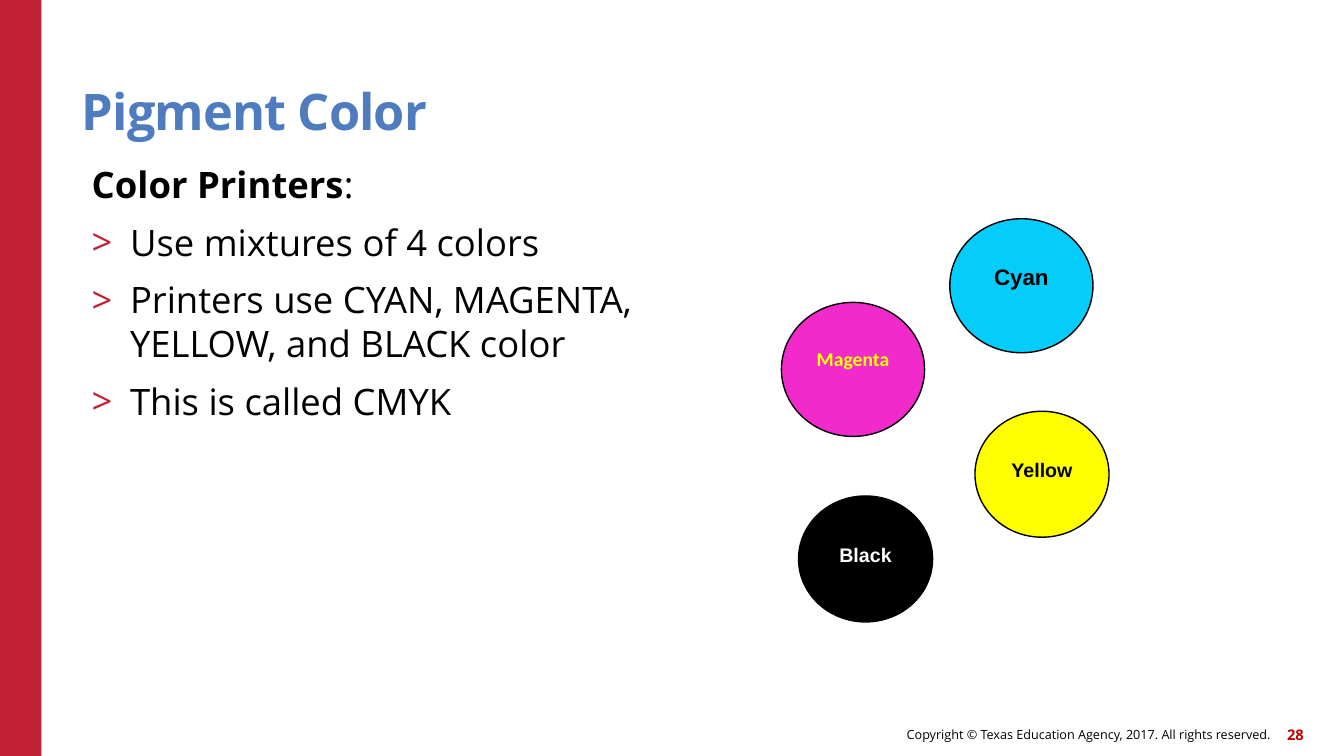
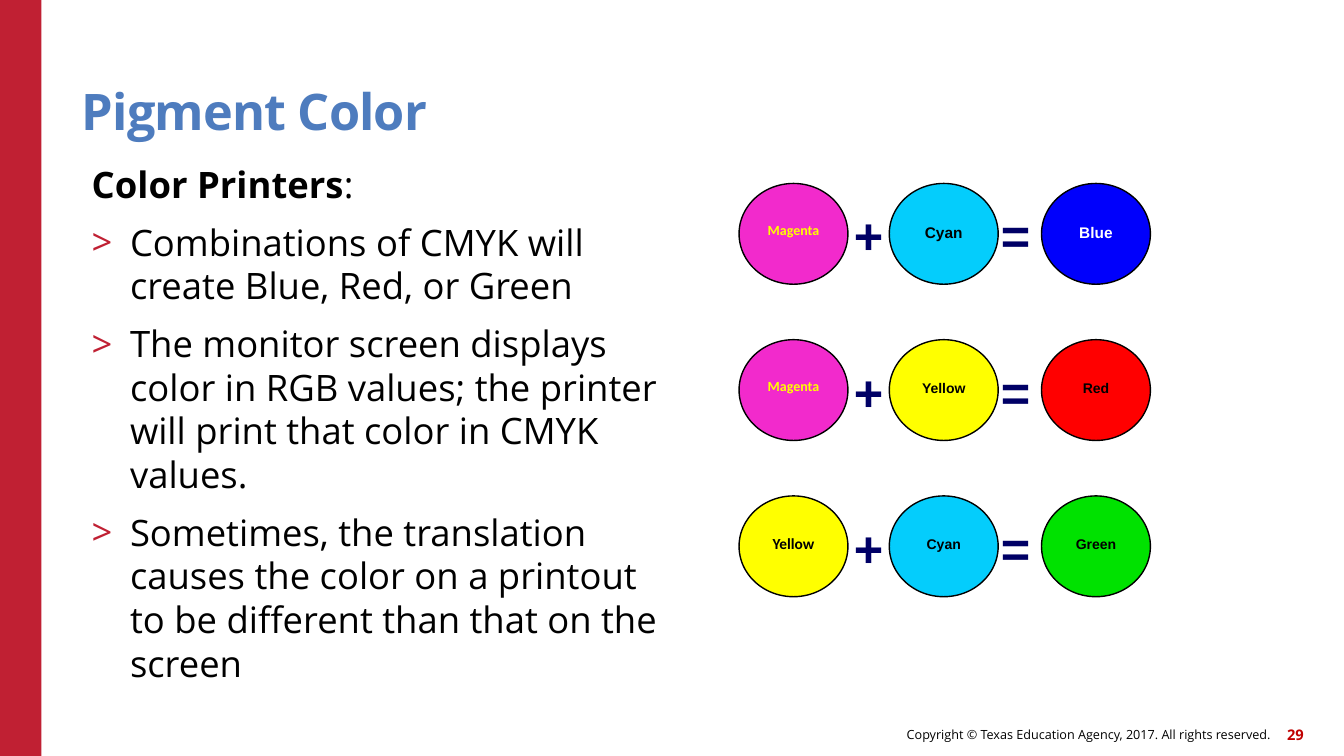
from collections import namedtuple

from lxml.etree import SubElement
from pptx import Presentation
from pptx.dml.color import RGBColor
from pptx.enum.shapes import MSO_SHAPE as SHAPE
from pptx.enum.text import MSO_ANCHOR as ANCHOR, MSO_AUTO_SIZE as AUTO, PP_ALIGN as ALIGN
from pptx.oxml.ns import qn
from pptx.util import Inches, Pt

BAND_RED = RGBColor(0xC0, 0x20, 0x33)
NUMBER_RED = RGBColor(0xC0, 0x00, 0x00)
TITLE_BLUE = RGBColor(0x4E, 0x7C, 0xBE)
SIGN_NAVY = RGBColor(0x00, 0x00, 0x66)
BLACK = RGBColor(0x00, 0x00, 0x00)
WHITE = RGBColor(0xFF, 0xFF, 0xFF)
CYAN = RGBColor(0x04, 0xCD, 0xFC)
MAGENTA = RGBColor(0xF2, 0x2A, 0xCC)
YELLOW = RGBColor(0xFF, 0xFF, 0x00)
BLUE = RGBColor(0x00, 0x00, 0xFC)
RED = RGBColor(0xFF, 0x00, 0x00)
GREEN = RGBColor(0x00, 0xE2, 0x00)

MAIN_FONT = "Open Sans"
TITLE = dict(name=MAIN_FONT, size=Pt(36), bold=True, color=TITLE_BLUE)
BODY = dict(name=MAIN_FONT, size=Pt(26), bold=False, color=BLACK)
LEAD = dict(BODY, bold=True)
COPYRIGHT = dict(name=MAIN_FONT, size=Pt(9), bold=False, color=BLACK)
NUMBER = dict(name=MAIN_FONT, size=Pt(10.5), bold=True, color=NUMBER_RED)
SIGN = dict(name="Arial", size=Pt(36), bold=True, color=SIGN_NAVY)

# drop: distance from the top of the circle's text area to its label, in inches
Ink = namedtuple("Ink", "label fill color size font drop", defaults=("Arial", 0.25))


def style(font, formats):
    for key, value in formats.items():
        if key == "color":
            font.color.rgb = value
        else:
            setattr(font, key, value)


def add_span(para, text, formats):
    span = para.add_run()
    span.text = text
    style(span.font, formats)
    return span


def place(shape, box):
    for key, value in zip(("left", "top", "width", "height"), box):
        setattr(shape, key, Inches(value))


def set_margins(frame, left=0, top=0, right=0, bottom=0):
    for side, value in zip(("left", "top", "right", "bottom"), (left, top, right, bottom)):
        setattr(frame, f"margin_{side}", Inches(value))


def add_shape(shapes, kind, box, fill):
    shape = shapes.add_shape(kind, *map(Inches, box))
    shape.shadow.inherit = False
    shape.fill.solid()
    shape.fill.fore_color.rgb = fill
    return shape


def add_text(shapes, box, text, formats):
    frame = shapes.add_textbox(*map(Inches, box)).text_frame
    frame.word_wrap = True
    add_span(frame.paragraphs[0], text, formats)
    return frame


def add_frame(page, number):
    """Red side band, copyright line and page number."""
    band = add_shape(page.shapes, SHAPE.RECTANGLE, (0, 0, 0.41, 7.5), BAND_RED)
    band.line.fill.background()
    footers = (
        ((6.14, 7.13, 6.46, 0.32),
         "Copyright © Texas Education Agency, 2017. All rights reserved.", COPYRIGHT),
        ((12.51, 7.13, 0.42, 0.32), str(number), NUMBER),
    )
    for box, text, formats in footers:
        frame = add_text(page.shapes, box, text, formats)
        set_margins(frame)
        frame.vertical_anchor = ANCHOR.MIDDLE
        frame.paragraphs[0].alignment = ALIGN.RIGHT


def fill_title(title, box, text):
    place(title, box)
    frame = title.text_frame
    frame.auto_size = AUTO.NONE
    frame.vertical_anchor = ANCHOR.BOTTOM
    set_margins(frame)
    para = frame.paragraphs[0]
    para.alignment = ALIGN.LEFT
    para.line_spacing = 0.9
    span = add_span(para, text, TITLE)
    span.font._element.set("spc", "-60")


def set_bullet(para, mark=None, indent=0.0):
    props = para._p.get_or_add_pPr()
    props.set("marL", str(Inches(indent)))
    props.set("indent", str(-Inches(indent)))
    if mark is None:
        SubElement(props, qn("a:buNone"))
        return
    color = SubElement(props, qn("a:buClr"))
    SubElement(color, qn("a:srgbClr"), val=str(BAND_RED))
    SubElement(props, qn("a:buFont"), typeface=MAIN_FONT)
    SubElement(props, qn("a:buChar"), char=mark)


def fill_body(body, box, lead, points):
    place(body, box)
    frame = body.text_frame
    frame.auto_size = AUTO.NONE
    frame.vertical_anchor = ANCHOR.TOP
    set_margins(frame, 0.1, 0.06, 0.1, 0.05)
    para = frame.paragraphs[0]
    set_bullet(para)
    para.space_before = Pt(0)
    add_span(para, lead, LEAD)
    add_span(para, ":", BODY)
    for point in points:
        para = frame.add_paragraph()
        para.level = 1
        set_bullet(para, ">", 0.38)
        para.space_before = Pt(10)
        add_span(para, point, BODY)


def add_circle(shapes, box, ink):
    circle = add_shape(shapes, SHAPE.OVAL, box, ink.fill)
    circle.line.color.rgb = BLACK
    circle.line.width = Pt(1)
    frame = circle.text_frame
    frame.word_wrap = True
    frame.vertical_anchor = ANCHOR.TOP
    set_margins(frame, top=ink.drop)
    para = frame.paragraphs[0]
    para.alignment = ALIGN.CENTER
    add_span(para, ink.label,
             dict(name=ink.font, size=Pt(ink.size), bold=True, color=ink.color))


def add_equation(page, left, top, inks):
    """One group: ink + ink = result."""
    shapes = page.shapes.add_group_shape().shapes
    for offset, ink in zip((0, 1.49, 3), inks):
        add_circle(shapes, (left + offset, top, 1.08, 1), ink)
    for offset, sign in ((1.04, "+"), (2.5, "=")):
        add_text(shapes, (left + offset, top + 0.16, 0.67, 0.71), sign, SIGN)


def add_page(deck, number, points):
    page = deck.slides.add_slide(deck.slide_layouts[1])
    add_frame(page, number)
    fill_title(page.shapes.title, (0.81, 0.44, 11, 0.96), "Pigment Color")
    fill_body(page.placeholders[1], (0.81, 1.55, 5.86, 5.18), "Color Printers", points)
    return page


def build_inks_page(deck):
    page = add_page(deck, 28, (
        "Use mixtures of 4 colors",
        "Printers use CYAN, MAGENTA, YELLOW, and BLACK color",
        "This is called CMYK",
    ))
    large, small = (1.42, 1.33), (1.33, 1.25)
    for corner, size, ink in (
        ((9.42, 2.17), large, Ink("Cyan", CYAN, BLACK, 16)),
        ((7.75, 3), large, Ink("Magenta", MAGENTA, YELLOW, 14, "Calibri", 0.25)),
        ((9.67, 4.08), small, Ink("Yellow", YELLOW, BLACK, 14, drop=0.28)),
        ((7.92, 4.92), small, Ink("Black", BLACK, WHITE, 14, drop=0.28)),
    ):
        add_circle(page.shapes, corner + size, ink)


def build_mixtures_page(deck):
    page = add_page(deck, 29, (
        "Combinations of CMYK will create Blue, Red, or Green",
        "The monitor screen displays color in RGB values; "
        "the printer will print that color in CMYK values.",
        "Sometimes, the translation causes the color on a printout "
        "to be different than that on the screen",
    ))
    magenta = Ink("Magenta", MAGENTA, YELLOW, 10, "Calibri", 0.23)
    equations = (
        (magenta, Ink("Cyan", CYAN, BLACK, 11), Ink("Blue", BLUE, WHITE, 11)),
        (magenta, Ink("Yellow", YELLOW, BLACK, 10), Ink("Red", RED, BLACK, 10)),
        (Ink("Yellow", YELLOW, BLACK, 11, "Calibri", 0.23),
         Ink("Cyan", CYAN, BLACK, 10), Ink("Green", GREEN, BLACK, 10)),
    )
    for row, inks in enumerate(equations):
        add_equation(page, 7.33, 1.82 + 1.55 * row, inks)


def main():
    deck = Presentation()
    deck.slide_width = Inches(13.33)
    deck.slide_height = Inches(7.5)
    build_inks_page(deck)
    build_mixtures_page(deck)
    deck.save("out.pptx")


if __name__ == "__main__":
    main()
